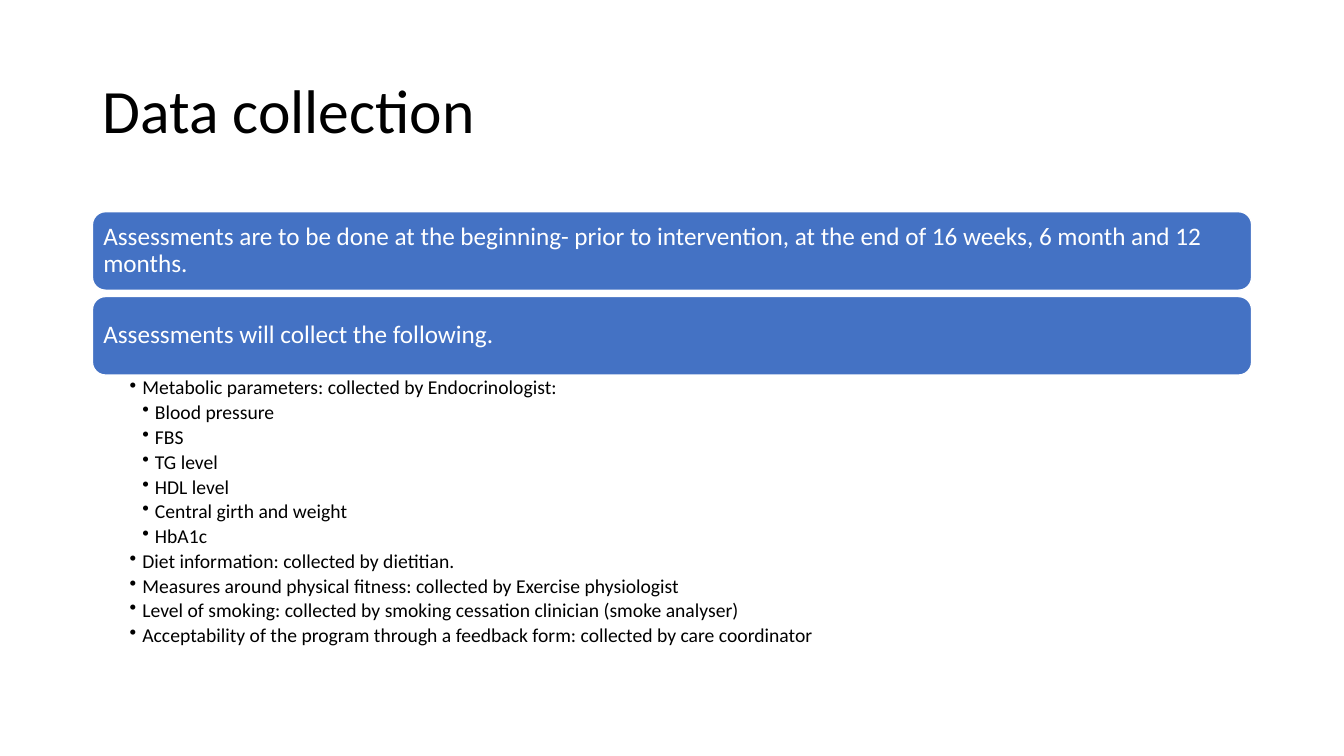
"""Build the data collection slide: a title, two statement bars and a bulleted list."""
import dataclasses
import typing

import lxml.etree
import pptx
import pptx.dml.color
import pptx.enum.shapes
import pptx.enum.text
import pptx.oxml.ns
import pptx.util

FONT = "Calibri"
BLACK, WHITE, BLUE = "000000", "FFFFFF", "4472C4"
COLUMNS, ROWS = 160, 180
LEFT, WIDTH = 11, 138
BAR_TOP, BAR_HEIGHT, BAR_PITCH = 50.4, 18.7, 20.2
BULLET_INDENT = 0.125

deck = pptx.Presentation()
deck.slide_width = pptx.util.Inches(13.33)
deck.slide_height = pptx.util.Inches(7.5)
page = deck.slides.add_slide(deck.slide_layouts[6])


@dataclasses.dataclass(frozen=True)
class Area:
    top: float
    height: float
    left: float = LEFT
    width: float = WIDTH

    def place(self) -> tuple[int, int, int, int]:
        column = deck.slide_width / COLUMNS
        row = deck.slide_height / ROWS
        return (round(self.left * column), round(self.top * row),
                round(self.width * column), round(self.height * row))


@dataclasses.dataclass(frozen=True)
class Item:
    text: str
    level: int = 0


BARS = [
    "Assessments are to be done at the beginning- prior to intervention, "
    "at the end of 16 weeks, 6 month and 12 months.",
    "Assessments will collect the following.",
]
MEASURES = [
    Item("Metabolic parameters: collected by Endocrinologist:", 1),
    Item("Blood pressure", 2),
    Item("FBS", 2),
    Item("TG level", 2),
    Item("HDL level", 2),
    Item("Central girth and weight", 2),
    Item("HbA1c", 2),
    Item("Diet information: collected by dietitian.", 1),
    Item("Measures around physical fitness: collected by Exercise physiologist", 1),
    Item("Level of smoking: collected by smoking cessation clinician (smoke analyser)", 1),
    Item("Acceptability of the program through a feedback form: collected by care coordinator", 1),
]


def color(value: str) -> pptx.dml.color.RGBColor:
    return pptx.dml.color.RGBColor.from_string(value)


def add_bullet(para: typing.Any, level: int) -> None:
    properties = para._p.get_or_add_pPr()
    properties.set("marL", str(pptx.util.Inches(BULLET_INDENT * level)))
    properties.set("indent", str(pptx.util.Inches(-BULLET_INDENT)))
    bullet = lxml.etree.SubElement(properties, pptx.oxml.ns.qn("a:buChar"))
    bullet.set("char", "•")


def write(shape: typing.Any, items: list[Item], *, size: float, ink: str,
          insets: tuple[float, float, float, float], middle: bool = True,
          space_after: float = 0) -> None:
    frame = shape.text_frame
    frame.word_wrap = True
    anchors = pptx.enum.text.MSO_ANCHOR
    frame.vertical_anchor = anchors.MIDDLE if middle else anchors.TOP
    (frame.margin_left, frame.margin_top,
     frame.margin_right, frame.margin_bottom) = map(pptx.util.Inches, insets)
    for index, item in enumerate(items):
        para = frame.add_paragraph() if index else frame.paragraphs[0]
        if item.level:
            para.level = item.level
            add_bullet(para, item.level)
        para.alignment = pptx.enum.text.PP_ALIGN.LEFT
        para.line_spacing = 0.9
        para.space_after = pptx.util.Pt(space_after)
        span = para.add_run()
        span.text = item.text
        span.font.name = FONT
        span.font.size = pptx.util.Pt(size)
        span.font.color.rgb = color(ink)


def add_bar(area: Area, text: str) -> None:
    bar = page.shapes.add_shape(
        pptx.enum.shapes.MSO_SHAPE.ROUNDED_RECTANGLE, *area.place())
    bar.shadow.inherit = False
    bar.fill.solid()
    bar.fill.fore_color.rgb = color(BLUE)
    bar.line.color.rgb = color(WHITE)
    bar.line.width = pptx.util.Pt(1)
    write(bar, [Item(text)], size=18, ink=WHITE, insets=(0.07, 0.07, 0.07, 0.07))


def main() -> None:
    title = page.shapes.add_textbox(*Area(top=9.6, height=34.8).place())
    write(title, [Item("Data collection")], size=44, ink=BLACK,
          insets=(0.1, 0.05, 0.1, 0.05))
    for index, text in enumerate(BARS):
        add_bar(Area(top=BAR_TOP + index * BAR_PITCH, height=BAR_HEIGHT), text)
    list_top = BAR_TOP + BAR_PITCH + BAR_HEIGHT
    measures = page.shapes.add_textbox(*Area(top=list_top, height=70.3).place())
    write(measures, MEASURES, size=14, ink=BLACK, middle=False,
          insets=(0.37, 0.03, 0.14, 0.03), space_after=2.55)
    deck.save("out.pptx")


if __name__ == "__main__":
    main()
